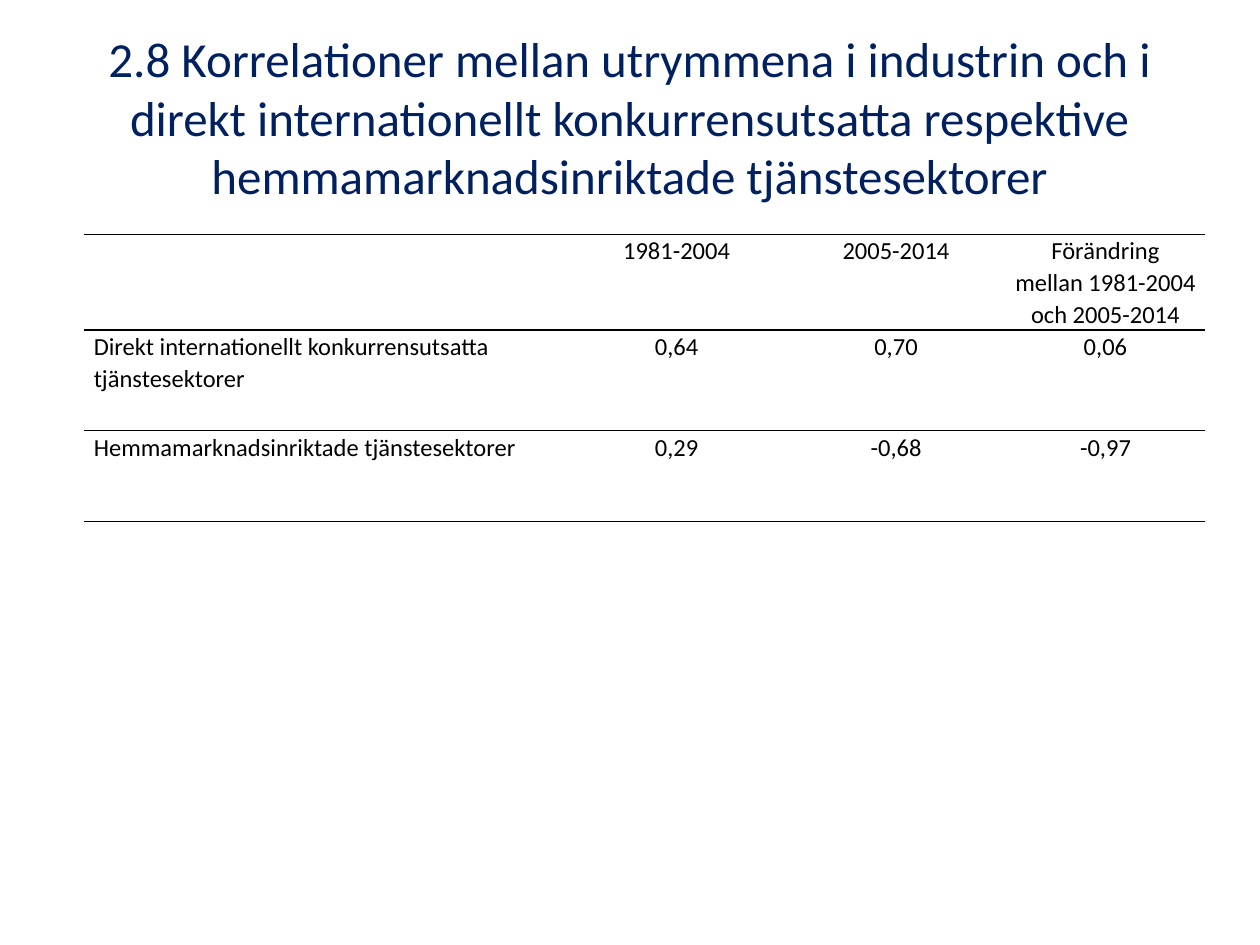
"""Build the slide on correlations between industry and service sectors."""
import pptx
import pptx.dml.color
import pptx.enum.text
import pptx.oxml.ns
import pptx.util
from lxml import etree

Pt = pptx.util.Pt
ALIGN = pptx.enum.text.PP_ALIGN
ANCHOR = pptx.enum.text.MSO_ANCHOR
NAVY = pptx.dml.color.RGBColor(0x00, 0x20, 0x60)
BLACK = pptx.dml.color.RGBColor(0x00, 0x00, 0x00)
NO_STYLE = "{2D5ABB26-0587-4C30-8999-92F81FD0307C}"

TITLE = (
    "2.8 Korrelationer mellan utrymmena i industrin och i direkt internationellt "
    "konkurrensutsatta respektive hemmamarknadsinriktade tjänstesektorer"
)
ROWS = [
    ["", "1981-2004", "2005-2014", "Förändring mellan 1981-2004 och 2005-2014"],
    ["Direkt internationellt konkurrensutsatta tjänstesektorer", "0,64", "0,70", "0,06"],
    ["Hemmamarknadsinriktade tjänstesektorer", "0,29", "-0,68", "-0,97"],
]
COLUMN_WIDTHS = [275.8, 125.4, 125.4, 114]
ROW_HEIGHTS = [46.8, 57.4, 51.8]


def write_text(frame, text, size, color, align, line_spacing=None, space_after=None):
    """Write one formatted paragraph into a text frame."""
    frame.word_wrap = True
    paragraph = frame.paragraphs[0]
    paragraph.alignment = align
    paragraph.line_spacing = line_spacing
    paragraph.space_after = space_after
    if text:
        run = paragraph.add_run()
        run.text = text
        run.font.name = "Calibri"
        run.font.size = Pt(size)
        run.font.color.rgb = color


def add_border(cell, side, color, width=1):
    """Draw a solid border on one side of a cell."""
    qualify = pptx.oxml.ns.qn
    properties = cell._tc.get_or_add_tcPr()
    line = etree.SubElement(properties, qualify("a:ln" + side), w=str(Pt(width)))
    fill = etree.SubElement(line, qualify("a:solidFill"))
    etree.SubElement(fill, qualify("a:srgbClr"), val=str(color))


def add_title(slide):
    """Place and format the title placeholder."""
    title = slide.shapes.title
    title.left, title.top, title.width, title.height = Pt(36), Pt(21.6), Pt(647.5), Pt(90)
    title.text_frame.auto_size = pptx.enum.text.MSO_AUTO_SIZE.NONE
    title.text_frame.vertical_anchor = ANCHOR.MIDDLE
    write_text(title.text_frame, TITLE, size=28, color=NAVY, align=ALIGN.CENTER)


def add_correlation_table(slide):
    """Add the table with horizontal rules around the header and at the end."""
    frame = slide.shapes.add_table(
        len(ROWS), len(COLUMN_WIDTHS), Pt(48.2), Pt(134),
        Pt(sum(COLUMN_WIDTHS)), Pt(sum(ROW_HEIGHTS)),
    )
    table = frame.table
    table.first_row = table.horz_banding = False
    table._tbl.tblPr.find(pptx.oxml.ns.qn("a:tableStyleId")).text = NO_STYLE
    for column, width in zip(table.columns, COLUMN_WIDTHS):
        column.width = Pt(width)
    for row_index, (row, height) in enumerate(zip(table.rows, ROW_HEIGHTS)):
        row.height = Pt(height)
        for column_index, cell in enumerate(row.cells):
            cell.margin_left = cell.margin_right = Pt(5.4)
            cell.margin_top = cell.margin_bottom = 0
            cell.vertical_anchor = ANCHOR.TOP
            write_text(
                cell.text_frame, ROWS[row_index][column_index], size=14, color=BLACK,
                align=ALIGN.CENTER if column_index else ALIGN.LEFT,
                line_spacing=1.07, space_after=Pt(8),
            )
            if row_index < 2:
                add_border(cell, "T", BLACK)
            if row_index != 1:
                add_border(cell, "B", BLACK)
            cell.fill.background()


def main():
    """Create the presentation and save it."""
    presentation = pptx.Presentation()
    presentation.slide_width, presentation.slide_height = Pt(720), Pt(540)
    slide = presentation.slides.add_slide(presentation.slide_layouts[5])
    add_title(slide)
    add_correlation_table(slide)
    presentation.save("out.pptx")


if __name__ == "__main__":
    main()
